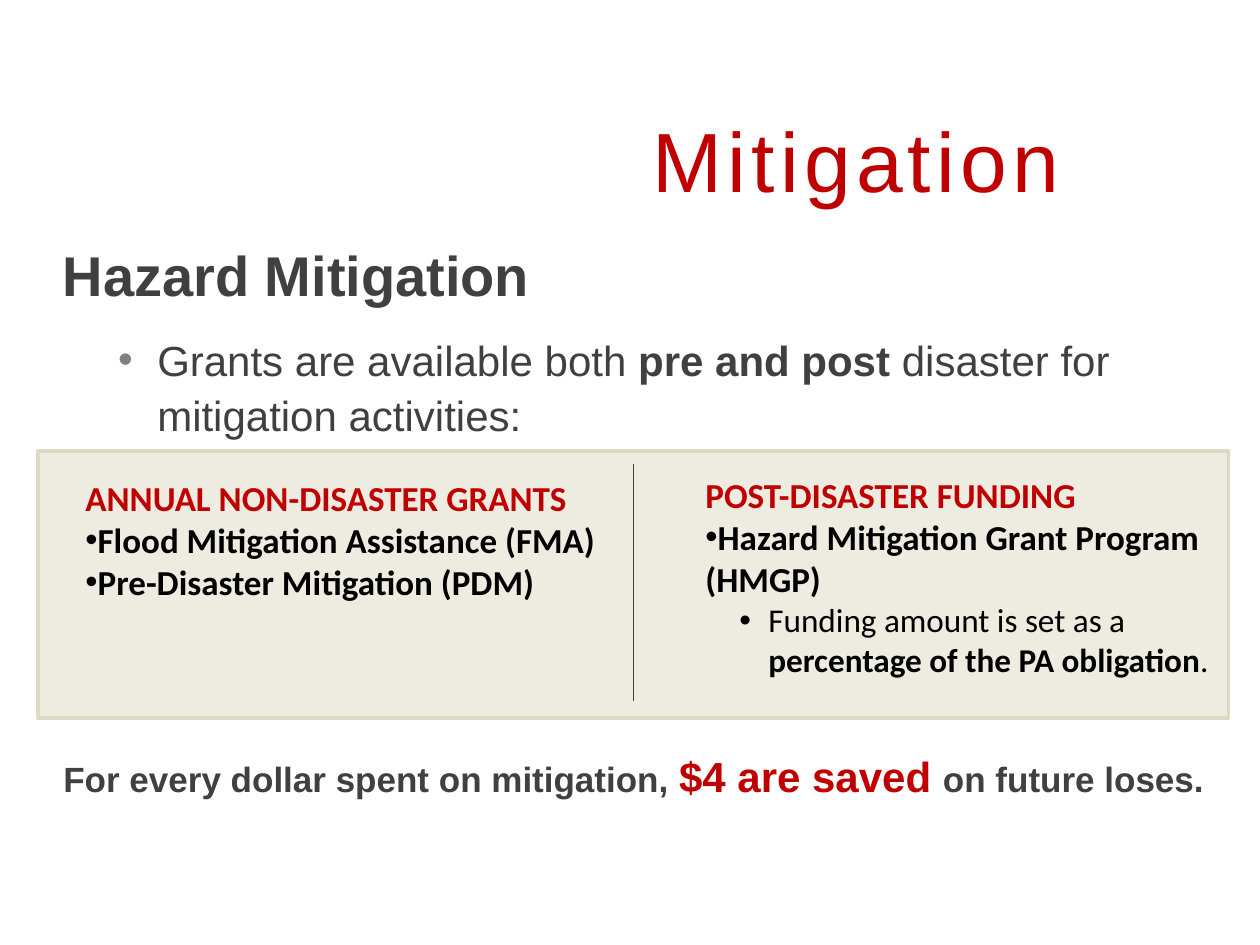
from lxml.etree import SubElement
from pptx import Presentation
from pptx.dml.color import RGBColor
from pptx.enum.shapes import MSO_CONNECTOR, MSO_SHAPE
from pptx.enum.text import MSO_ANCHOR, PP_ALIGN
from pptx.oxml.ns import qn
from pptx.util import Inches, Pt

COLORS = {
    "red": "C00000", "gray": "404040", "bullet": "808080", "black": "000000",
    "panel": "EEECE1", "border": "DDD9C3",
}
UNIT = Inches(0.1)  # the slide is a grid of 100 columns by 75 rows


def cells(*counts):
    return [round(count * UNIT) for count in counts]


def write(paragraph, runs, font, margin=0, indent=0, bullet=None):
    """Add (text, size, color, bold) runs; margin and indent are in grid columns."""
    properties = paragraph._p.get_or_add_pPr()
    properties.set("marL", str(round(margin * UNIT)))
    properties.set("indent", str(round(indent * UNIT)))
    if bullet:
        color = SubElement(properties, qn("a:buClr"))
        SubElement(color, qn("a:srgbClr"), val=COLORS[bullet])
        SubElement(properties, qn("a:buFont"), typeface="Arial")
        SubElement(properties, qn("a:buChar"), char="•")
    else:
        SubElement(properties, qn("a:buNone"))
    for text, size, color, bold in runs:
        run = paragraph.add_run()
        run.text = text
        run.font.name = font
        run.font.size = Pt(size)
        run.font.bold = bold
        run.font.color.rgb = RGBColor.from_string(COLORS[color])


presentation = Presentation()
presentation.slide_width, presentation.slide_height = cells(100, 75)
slide = presentation.slides.add_slide(presentation.slide_layouts[5])
shapes = slide.shapes

# Panel behind the two funding columns
panel = shapes.add_shape(MSO_SHAPE.RECTANGLE, *cells(3, 35.8, 94.5, 21.2))
panel.shadow.inherit = False
panel.fill.solid()
panel.fill.fore_color.rgb = RGBColor.from_string(COLORS["panel"])
panel.line.color.rgb = RGBColor.from_string(COLORS["border"])
panel.line.width = Pt(2)

# Title
title = shapes.title
title.left, title.top, title.width, title.height = cells(0, 8.4, 85.1, 8.5)
title.text_frame.vertical_anchor = MSO_ANCHOR.MIDDLE
title_paragraph = title.text_frame.paragraphs[0]
title_paragraph.alignment = PP_ALIGN.RIGHT
write(title_paragraph, [("Mitigation", 48, "red", False)], "Arial")
title_paragraph.runs[0].font._element.set("spc", "300")

# Text boxes: place, font, line spacing, space before, alignment, paragraphs
# Each paragraph: runs, margin, indent, bullet color
text_boxes = [
    ((4, 18.1, 92.7, 18), "Arial", 1.1, 12, PP_ALIGN.LEFT, [
        ([("Hazard Mitigation", 32, "gray", True)], 3.1, -3.1, None),
        ([("Grants are available both ", 24, "gray", False),
          ("pre and post ", 24, "gray", True),
          ("disaster for mitigation activities:", 24, "gray", False)],
         7.5, -3.1, "bullet"),
    ]),
    ((5.8, 37.3, 44.4, 14.8), "Calibri", 1, 0, PP_ALIGN.LEFT, [
        ([("ANNUAL NON-DISASTER GRANTS", 20, "red", True)], 0, 0, None),
        ([("Flood Mitigation Assistance (FMA)", 20, "black", True)], 0, 0, "black"),
        ([("Pre-Disaster Mitigation (PDM)", 20, "black", True)], 0, 0, "black"),
    ]),
    ((55, 37.1, 42.2, 21.2), "Calibri", 1, 0, PP_ALIGN.LEFT, [
        ([("POST-DISASTER FUNDING", 20, "red", True)], 0, 0, None),
        ([("Hazard Mitigation Grant Program (HMGP)", 20, "black", True)],
         0, 0, "black"),
        ([("Funding amount is set as a ", 19, "black", False),
          ("percentage of the PA obligation", 19, "black", True),
          (".", 19, "black", False)], 5, -2.3, "black"),
    ]),
    ((2.5, 59.1, 95.6, 5), "Arial", 1, 0, PP_ALIGN.CENTER, [
        ([("For every dollar spent on mitigation, ", 20, "gray", True),
          ("$4 are saved ", 24, "red", True),
          ("on future loses.", 20, "gray", True)], 0, 0, None),
    ]),
]
for place, font, line_spacing, space_before, alignment, paragraphs in text_boxes:
    frame = shapes.add_textbox(*cells(*place)).text_frame
    frame.word_wrap = True
    for index, (runs, margin, indent, bullet) in enumerate(paragraphs):
        paragraph = frame.add_paragraph() if index else frame.paragraphs[0]
        paragraph.alignment = alignment
        paragraph.line_spacing = line_spacing
        paragraph.space_before = Pt(space_before if index else 0)
        write(paragraph, runs, font, margin, indent, bullet)

# Divider between the columns
divider = shapes.add_connector(MSO_CONNECTOR.STRAIGHT, *cells(50.3, 36.8, 50.3, 55.6))
divider.line.color.rgb = RGBColor.from_string(COLORS["gray"])
divider.line.width = Pt(0.75)
SubElement(divider._element.spPr, qn("a:effectLst"))

presentation.save("out.pptx")
